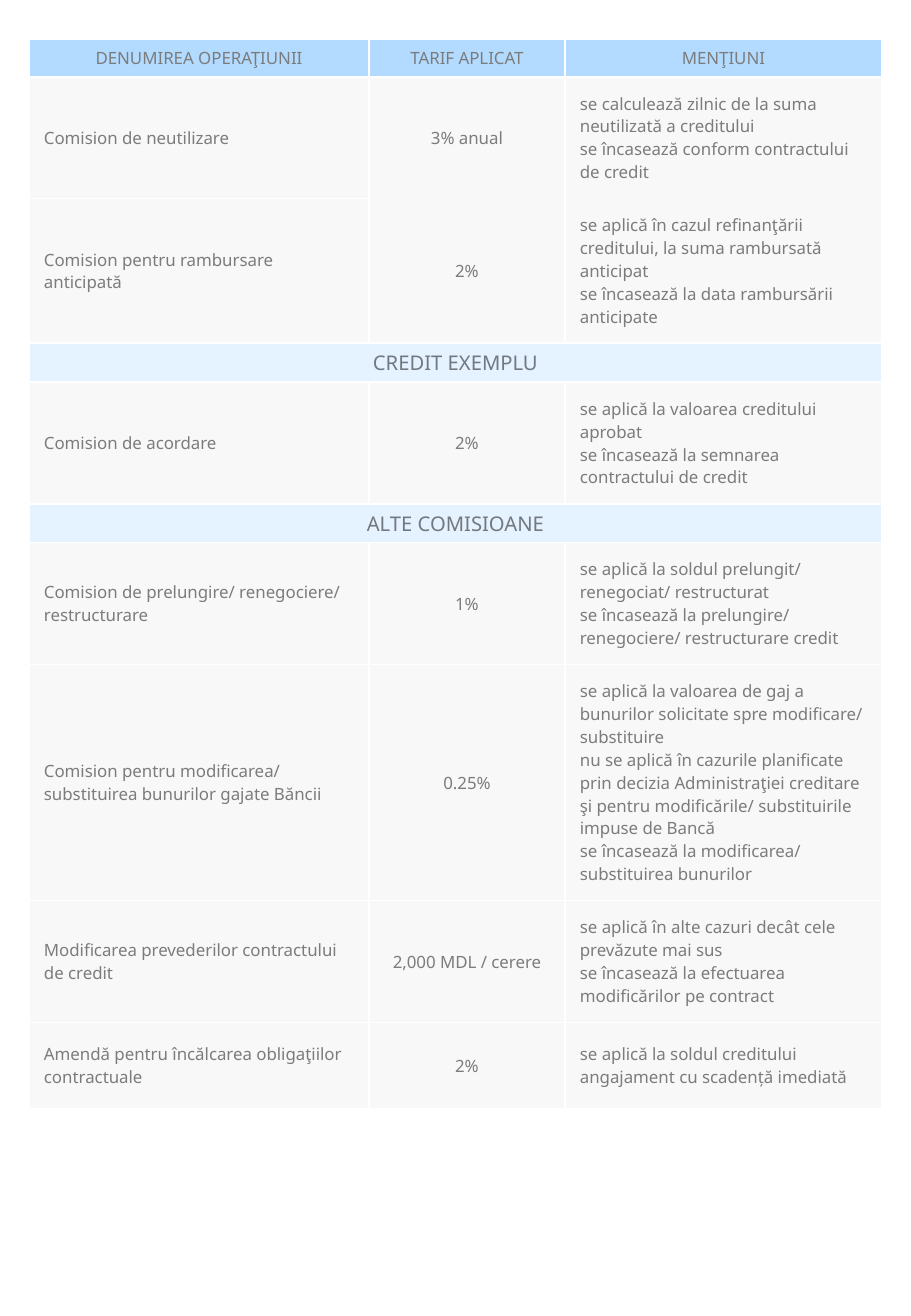
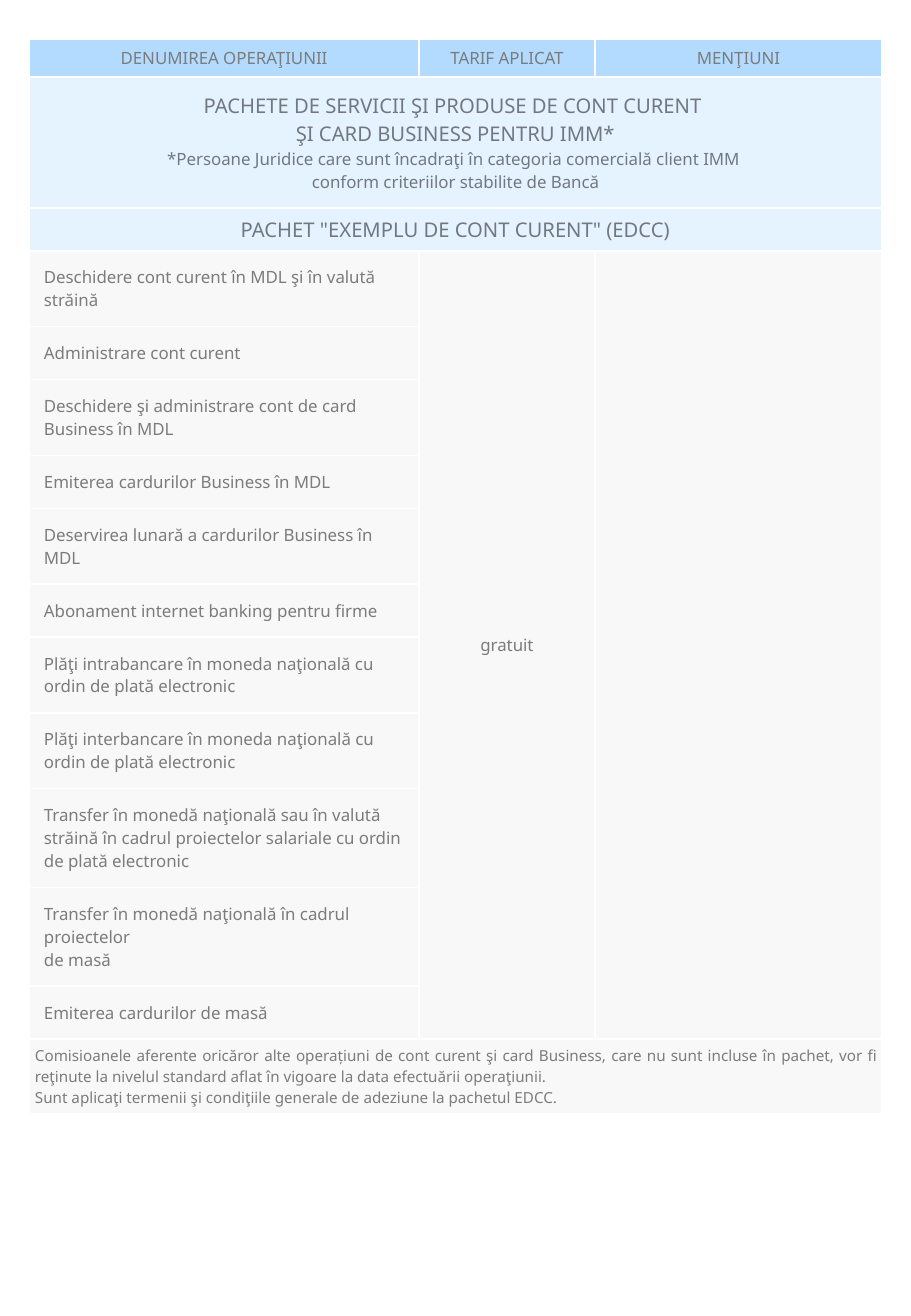
from typing import NamedTuple

from lxml import etree
from pptx import Presentation
from pptx.dml.color import RGBColor
from pptx.enum.text import MSO_ANCHOR, PP_ALIGN
from pptx.oxml.ns import qn
from pptx.util import Pt

PX = 7526
FONT = "Noto Sans"
WHITE = "FFFFFF"
LEFT, CENTER, JUSTIFY = PP_ALIGN.LEFT, PP_ALIGN.CENTER, PP_ALIGN.JUSTIFY
MIDDLE = MSO_ANCHOR.MIDDLE
SIDES = ("L", "R", "T", "B")
TABLE_BOX = (29, 39, 853)


class Style(NamedTuple):
    """Look of one kind of table row."""
    fill: str
    opacity: int
    inset: int
    aligns: tuple
    sizes: tuple = (10,)
    color: str = "7C7C7C"
    text_opacity: int = 100


HEAD = Style("0088FF", 30, 6, (CENTER, CENTER, CENTER))
BODY = Style("F2F2F2", 50, 15, (LEFT, CENTER, LEFT))
SECTION = Style("0088FF", 10, 5, (CENTER,), (12,), "000000", 50)
BANNER = SECTION._replace(inset=15, sizes=(12, 10))
NOTE = Style("F2F2F2", 50, 6, (JUSTIFY,), (9,))

HEADER = (HEAD, 38, ["DENUMIREA OPERAŢIUNII", "TARIF APLICAT", "MENŢIUNI"])

FEE_ROWS = [
    HEADER,
    (BODY, 120, ["Comision de neutilizare", "3% anual",
                 "se calculează zilnic de la suma neutilizată a creditului\n"
                 "se încasează conform contractului de credit"]),
    (BODY, 143, ["Comision pentru rambursare anticipată", "2%",
                 "se aplică în cazul refinanţării creditului, la suma rambursată anticipat\n"
                 "se încasează la data rambursării anticipate"]),
    (SECTION, 39, ["CREDIT EXEMPLU"]),
    (BODY, 120, ["Comision de acordare", "2%",
                 "se aplică la valoarea creditului aprobat\n"
                 "se încasează la semnarea contractului de credit"]),
    (SECTION, 39, ["ALTE COMISIOANE"]),
    (BODY, 120, ["Comision de prelungire/ renegociere/ restructurare", "1%",
                 "se aplică la soldul prelungit/ renegociat/ restructurat\n"
                 "se încasează la prelungire/ renegociere/ restructurare credit"]),
    (BODY, 235, ["Comision pentru modificarea/ substituirea bunurilor gajate Băncii", "0.25%",
                 "se aplică la valoarea de gaj a bunurilor solicitate spre modificare/ substituire\n"
                 "nu se aplică în cazurile planificate prin decizia Administraţiei creditare "
                 "şi pentru modificările/ substituirile impuse de Bancă\n"
                 "se încasează la modificarea/ substituirea bunurilor"]),
    (BODY, 120, ["Modificarea prevederilor contractului de credit", "2,000 MDL / cerere",
                 "se aplică în alte cazuri decât cele prevăzute mai sus\n"
                 "se încasează la efectuarea modificărilor pe contract"]),
    (BODY, 87, ["Amendă pentru încălcarea obligaţiilor contractuale", "2%",
                "se aplică la soldul creditului\nangajament cu scadență imediată"]),
]

PACKAGE_ROWS = [
    HEADER,
    (BANNER, 129, ["PACHETE DE SERVICII ŞI PRODUSE DE CONT CURENT \v"
                   "ŞI CARD BUSINESS PENTRU IMM*\n"
                   "*Persoane Juridice care sunt încadraţi în categoria comercială client IMM \v"
                   "conform criteriilor stabilite de Bancă"]),
    (SECTION, 43, ['PACHET "EXEMPLU DE CONT CURENT" (EDCC)']),
    (BODY, 75, ["Deschidere cont curent în MDL şi în valută străină", "gratuit", ""]),
    (BODY, 51, ["Administrare cont curent", "", ""]),
    (BODY, 75, ["Deschidere şi administrare cont de card Business în MDL", "", ""]),
    (BODY, 51, ["Emiterea cardurilor Business în MDL", "", ""]),
    (BODY, 75, ["Deservirea lunară a cardurilor Business în MDL", "", ""]),
    (BODY, 52, ["Abonament internet banking pentru firme", "", ""]),
    (BODY, 74, ["Plăţi intrabancare în moneda naţională cu ordin de plată electronic", "", ""]),
    (BODY, 75, ["Plăţi interbancare în moneda naţională cu ordin de plată electronic", "", ""]),
    (BODY, 97, ["Transfer în monedă naţională sau în valută străină în cadrul proiectelor "
                "salariale cu ordin de plată electronic", "", ""]),
    (BODY, 98, ["Transfer în monedă naţională în cadrul proiectelor\nde masă", "", ""]),
    (BODY, 51, ["Emiterea cardurilor de masă", "", ""]),
    (NOTE, 75, ["Comisioanele aferente oricăror alte operațiuni de cont curent şi card Business, "
                "care nu sunt incluse în pachet, vor fi reţinute la nivelul standard aflat în "
                "vigoare la data efectuării operaţiunii.\n"
                "Sunt aplicaţi termenii şi condiţiile generale de adeziune la pachetul EDCC."]),
]


def rgb(color):
    """Turn a hex string into a colour."""
    return RGBColor.from_string(color)


def set_opacity(element, percent):
    """Give every colour inside an element an opacity."""
    if percent < 100:
        for clr in element.iter(qn("a:srgbClr")):
            etree.SubElement(clr, qn("a:alpha"), val=str(percent * 1000))


def set_borders(cell, hidden=""):
    """Draw thin white borders on all sides but the hidden ones."""
    tc_pr = cell._tc.get_or_add_tcPr()
    for i, side in enumerate(SIDES):
        ln = etree.Element(qn("a:ln" + side), w=str(Pt(1)))
        if side in hidden:
            etree.SubElement(ln, qn("a:noFill"))
        else:
            fill = etree.SubElement(ln, qn("a:solidFill"))
            etree.SubElement(fill, qn("a:srgbClr"), val=WHITE)
        tc_pr.insert(i, ln)


def write_cell(cell, text, style, align):
    """Fill a cell and set its text, one paragraph for each line."""
    cell.fill.solid()
    cell.fill.fore_color.rgb = rgb(style.fill)
    set_opacity(cell._tc.tcPr, style.opacity)
    cell.margin_left = cell.margin_right = style.inset * PX
    cell.margin_top = cell.margin_bottom = style.inset * PX
    cell.vertical_anchor = MIDDLE
    tf = cell.text_frame
    for i, line in enumerate(text.split("\n")):
        p = tf.add_paragraph() if i else tf.paragraphs[0]
        p.text = line
        p.alignment = align
        p.font.name = FONT
        p.font.size = Pt(style.sizes[min(i, len(style.sizes) - 1)])
        p.font.color.rgb = rgb(style.color)
        set_opacity(p._p, style.text_opacity)


def add_tariff_table(s, box, widths, rows, open_edges=(), merges=()):
    """Place a tariff table; rows with a single text span its width."""
    left, top, width = box
    height = sum(row_height for _, row_height, _ in rows)
    frame = s.shapes.add_table(len(rows), len(widths), left * PX, top * PX,
                               width * PX, height * PX)
    table = frame.table
    table.first_row = table.horz_banding = False
    for column, column_width in zip(table.columns, widths):
        column.width = column_width * PX
    hidden = dict(open_edges)
    for r, (style, row_height, texts) in enumerate(rows):
        table.rows[r].height = row_height * PX
        single = len(texts) == 1
        for c in range(len(widths)):
            text = texts[c] if c < len(texts) else ""
            cell = table.cell(r, c)
            write_cell(cell, text, style, style.aligns[0 if single else c])
            set_borders(cell, hidden.get((r, c), ""))
        if single:
            table.cell(r, 0).merge(table.cell(r, len(widths) - 1))
    for first, last in merges:
        table.cell(*first).merge(table.cell(*last))


def main():
    """Build both tariff slides."""
    prs = Presentation()
    prs.slide_width, prs.slide_height = 911 * PX, 1316 * PX
    blank = prs.slide_layouts[6]
    open_edges = [((r, c), side) for r, side in ((1, "B"), (2, "T")) for c in (1, 2)]
    add_tariff_table(prs.slides.add_slide(blank), TABLE_BOX, (340, 196, 317),
                     FEE_ROWS, open_edges=open_edges)
    merges = [((3, c), (13, c)) for c in (1, 2)]
    add_tariff_table(prs.slides.add_slide(blank), TABLE_BOX, (390, 176, 287),
                     PACKAGE_ROWS, merges=merges)
    prs.save("out.pptx")


if __name__ == "__main__":
    main()
